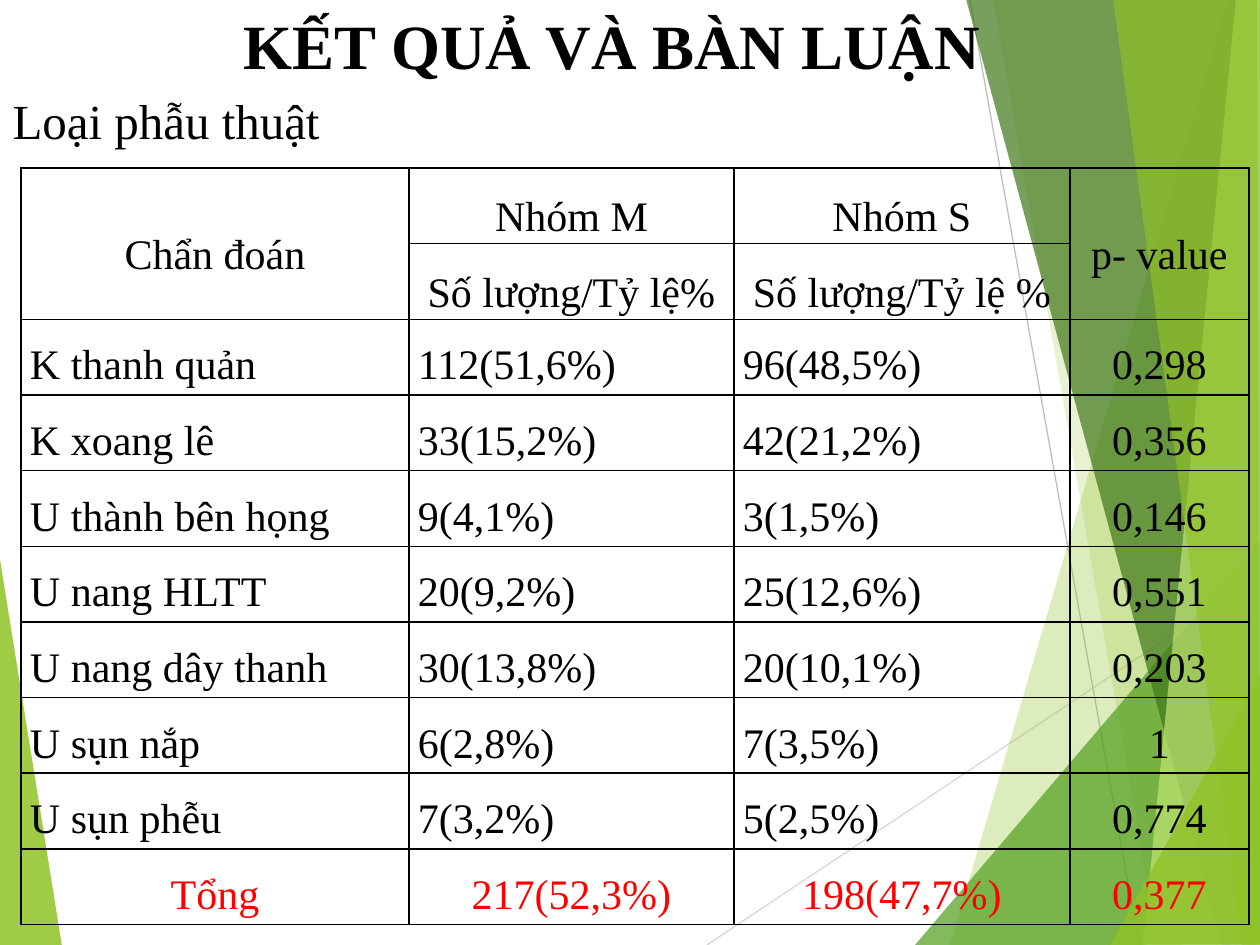
from dataclasses import dataclass

import lxml.etree
import pptx
import pptx.dml.color
import pptx.enum.shapes
import pptx.enum.text
import pptx.oxml.ns
import pptx.util

PX = 914400 / 126
ALIGN = pptx.enum.text.PP_ALIGN
ANCHOR = pptx.enum.text.MSO_ANCHOR
qn = pptx.oxml.ns.qn


@dataclass(frozen=True)
class Theme:
    font: str = "Times New Roman"
    text: str = "000000"
    total: str = "FF0000"
    lime: str = "90C226"
    pale_lime: str = "C0E474"
    green: str = "54A021"
    dark_green: str = "3F7819"
    light_grey: str = "D9D9D9"
    grey: str = "BFBFBF"
    title_size: int = 36
    subtitle_size: int = 28
    table_size: int = 24


@dataclass(frozen=True)
class Facet:
    points: tuple[tuple[int, int], ...]
    color: str
    opacity: int


@dataclass(frozen=True)
class Ray:
    start: tuple[int, int]
    end: tuple[int, int]
    color: str


THEME = Theme()

BACKDROP = (
    Facet(((-1, 553), (62, 946), (-1, 945)), THEME.lime, 85),
    Ray((707, 945), (1261, 576), THEME.light_grey),
    Ray((970, 0), (1139, 945), THEME.grey),
    Facet(((1228, 0), (950, 945), (1262, 946), (1261, 1)), THEME.lime, 30),
    Facet(((993, -1), (1158, 945), (1261, 945), (1261, -1)), THEME.lime, 20),
    Facet(((915, 945), (1260, 540), (1261, 945)), THEME.green, 72),
    Facet(((966, -1), (1222, 945), (1261, 944), (1261, -1)), THEME.dark_green, 70),
    Facet(((1236, -1), (1143, 945), (1261, 945), (1260, -1)), THEME.pale_lime, 70),
    Facet(((1113, -1), (1242, 945), (1260, 945), (1257, -1)), THEME.lime, 65),
    Facet(((1110, 945), (1261, 674), (1261, 944)), THEME.lime, 80),
)

COLUMN_WIDTHS = (388, 325, 336, 179)
TABLE_HEIGHT = 756
HEADER_ROWS = 2
MERGED_COLUMNS = (0, 3)
ROWS = (
    ("Chẩn đoán", "Nhóm M", "Nhóm S", "p- value"),
    ("", "Số lượng/Tỷ lệ%", "Số lượng/Tỷ lệ %", ""),
    ("K thanh quản", "112(51,6%)", "96(48,5%)", "0,298"),
    ("K xoang lê", "33(15,2%)", "42(21,2%)", "0,356"),
    ("U thành bên họng", "9(4,1%)", "3(1,5%)", "0,146"),
    ("U nang HLTT", "20(9,2%)", "25(12,6%)", "0,551"),
    ("U nang dây thanh", "30(13,8%)", "20(10,1%)", "0,203"),
    ("U sụn nắp", "6(2,8%)", "7(3,5%)", "1"),
    ("U sụn phễu", "7(3,2%)", "5(2,5%)", "0,774"),
    ("Tổng", "217(52,3%)", "198(47,7%)", "0,377"),
)


def px(length: float) -> pptx.util.Emu:
    return pptx.util.Emu(round(length * PX))


def rgb(color: str) -> pptx.dml.color.RGBColor:
    return pptx.dml.color.RGBColor.from_string(color)


def write_text(text_frame, text: str, *, size: int, color: str = THEME.text,
               bold: bool = False, align=ALIGN.LEFT, spacing: float = 1.0) -> None:
    paragraph = text_frame.paragraphs[0]
    paragraph.alignment = align
    paragraph.line_spacing = spacing
    paragraph.space_before = pptx.util.Pt(0)
    run = paragraph.add_run()
    run.text = text
    run.font.name = THEME.font
    run.font.size = pptx.util.Pt(size)
    run.font.bold = bold
    run.font.color.rgb = rgb(color)


def draw_facet(slide, facet: Facet) -> None:
    builder = slide.shapes.build_freeform(*facet.points[0], scale=PX)
    builder.add_line_segments(facet.points[1:], close=True)
    shape = builder.convert_to_shape()
    shape.shadow.inherit = False
    shape.line.fill.background()
    shape.fill.solid()
    shape.fill.fore_color.rgb = rgb(facet.color)
    color = shape.element.xpath("./p:spPr/a:solidFill/a:srgbClr")[0]
    lxml.etree.SubElement(color, qn("a:alpha"), val=str(facet.opacity * 1000))


def draw_ray(slide, ray: Ray) -> None:
    connector = slide.shapes.add_connector(
        pptx.enum.shapes.MSO_CONNECTOR.STRAIGHT,
        *(px(value) for value in ray.start + ray.end))
    connector.line.color.rgb = rgb(ray.color)
    connector.line.width = pptx.util.Pt(0.75)
    lxml.etree.SubElement(connector.element.spPr, qn("a:effectLst"))


def place_heading(shape, box: tuple[int, int, int, int], text: str, *,
                  size: int, bold: bool = False) -> None:
    """Fit a placeholder to its box and bring it in front of the backdrop."""
    shape.left, shape.top, shape.width, shape.height = map(px, box)
    text_frame = shape.text_frame
    text_frame.word_wrap = False
    text_frame.auto_size = pptx.enum.text.MSO_AUTO_SIZE.SHAPE_TO_FIT_TEXT
    text_frame.vertical_anchor = ANCHOR.TOP
    write_text(text_frame, text, size=size, bold=bold)
    properties = text_frame.paragraphs[0].element if hasattr(
        text_frame.paragraphs[0], "element") else shape.element.xpath(".//a:p")[0]
    properties = properties.find(qn("a:pPr"))
    properties.set("marL", "0")
    properties.set("indent", "0")
    lxml.etree.SubElement(properties, qn("a:buNone"))
    shape.element.getparent().append(shape.element)


def add_borders(cell) -> None:
    properties = cell._tc.get_or_add_tcPr()
    for position, side in enumerate(("lnL", "lnR", "lnT", "lnB")):
        line = lxml.etree.Element(qn(f"a:{side}"), w=str(pptx.util.Pt(1)))
        fill = lxml.etree.SubElement(line, qn("a:solidFill"))
        lxml.etree.SubElement(fill, qn("a:srgbClr"), val=THEME.text)
        properties.insert(position, line)


def draw_table(slide) -> None:
    table = slide.shapes.add_table(
        len(ROWS), len(COLUMN_WIDTHS), px(21), px(168),
        px(sum(COLUMN_WIDTHS)), px(TABLE_HEIGHT)).table
    table.first_row = table.horz_banding = False
    for column, width in zip(table.columns, COLUMN_WIDTHS):
        column.width = px(width)
    for row in table.rows:
        row.height = px(TABLE_HEIGHT / len(ROWS))
    for column in MERGED_COLUMNS:
        table.cell(0, column).merge(table.cell(HEADER_ROWS - 1, column))

    last_row, last_column = len(ROWS) - 1, len(COLUMN_WIDTHS) - 1
    for i, texts in enumerate(ROWS):
        for j, text in enumerate(texts):
            cell = table.cell(i, j)
            cell.fill.background()
            add_borders(cell)
            cell.margin_left = cell.margin_right = px(9)
            cell.margin_top = cell.margin_bottom = 0
            cell.vertical_anchor = ANCHOR.MIDDLE if i < HEADER_ROWS else ANCHOR.TOP
            centred = i < HEADER_ROWS or i == last_row or j == last_column
            if text:
                write_text(cell.text_frame, text, size=THEME.table_size, spacing=1.5,
                           color=THEME.total if i == last_row else THEME.text,
                           align=ALIGN.CENTER if centred else ALIGN.JUSTIFY)


def main() -> None:
    presentation = pptx.Presentation()
    presentation.slide_width, presentation.slide_height = px(1260), px(945)
    slide = presentation.slides.add_slide(presentation.slide_layouts[1])
    title, subtitle = slide.placeholders
    for item in BACKDROP:
        if isinstance(item, Facet):
            draw_facet(slide, item)
        else:
            draw_ray(slide, item)
    place_heading(title, (231, 0, 769, 89), "KẾT QUẢ VÀ BÀN LUẬN",
                  size=THEME.title_size, bold=True)
    place_heading(subtitle, (0, 84, 340, 72), "Loại phẫu thuật",
                  size=THEME.subtitle_size)
    draw_table(slide)
    presentation.save("out.pptx")


if __name__ == "__main__":
    main()
